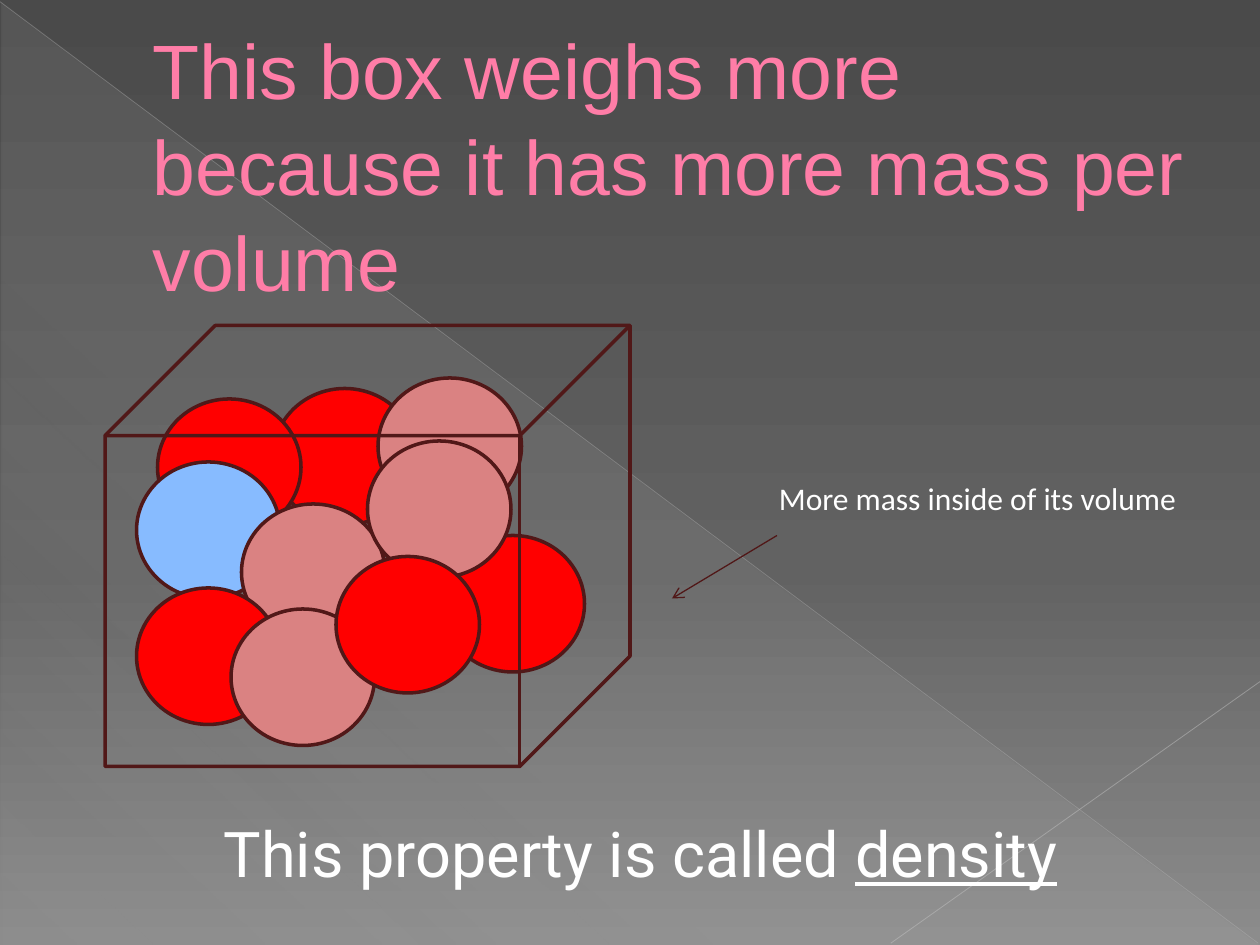
"""Slide showing that a box with more mass per volume has a higher density."""
from lxml import etree
from pptx import Presentation
from pptx.dml.color import RGBColor
from pptx.enum import shapes, text
from pptx.oxml.ns import qn
from pptx.util import Pt

TITLE = "This box weighs more because it has more mass per volume"
LABEL = "More mass inside of its volume"
PROPERTY = ["This property is called ", "density"]

RED, ROSE, BLUE = "FF0000", "DA8282", "87BBFF"
OUTLINE, WHITE = "511818", "FFFFFF"
BACKDROP = [(0, "4A4A4A", 100), (60, "626262", 100), (100, "8C8C8C", 100)]
SHEEN = [(0, "D2D2D2", 10), (70, "D2D2D2", 8), (100, "D2D2D2", 1)]
RAYS = [((0, 1), (719, 539), "BFBFBF", 0.39, 35),
        ((720, 389.5), (509, 539), "C6C6C6", 0.47, 45)]
BALL_SIZE = (82, 78)
BACK_BALLS = [(156, 222, RED), (252, 306, RED), (216, 216, ROSE), (90, 228, RED)]
FRONT_BALLS = [(78, 264, BLUE), (138, 288, ROSE), (78, 336, RED),
               (132, 348, ROSE), (210, 252, ROSE), (192, 318, RED)]
BOX = (60, 186, 300, 252)
ARROW = ((444, 306), (384, 342))


def rgb(value):
    return RGBColor.from_string(value)


def add_color(parent, value, alpha=100):
    clr = etree.SubElement(parent, qn("a:srgbClr"), val=value)
    if alpha < 100:
        etree.SubElement(clr, qn("a:alpha"), val=str(alpha * 1000))


def set_gradient(fill, element, stops, angle):
    fill.gradient()
    grad = element.find(".//" + qn("a:gradFill"))
    for child in list(grad):
        grad.remove(child)
    gs_list = etree.SubElement(grad, qn("a:gsLst"))
    for pos, value, alpha in stops:
        add_color(etree.SubElement(gs_list, qn("a:gs"), pos=str(pos * 1000)), value, alpha)
    etree.SubElement(grad, qn("a:lin"), ang=str(angle * 60000), scaled="0")


def add_shape(s, kind, box, fill=None):
    sp = s.shapes.add_shape(kind, *map(Pt, box))
    sp.shadow.inherit = False
    if fill:
        sp.fill.solid()
        sp.fill.fore_color.rgb = rgb(fill)
    else:
        sp.fill.background()
    sp.line.color.rgb = rgb(OUTLINE)
    sp.line.width = Pt(2)
    return sp


def add_balls(s, balls):
    for x, y, fill in balls:
        add_shape(s, shapes.MSO_SHAPE.OVAL, (x, y, *BALL_SIZE), fill)


def add_line(s, start, end, color, width, alpha=100, arrow=False):
    line = s.shapes.add_connector(shapes.MSO_CONNECTOR.STRAIGHT, *map(Pt, start + end))
    line.line.color.rgb = rgb(color)
    line.line.width = Pt(width)
    ln = line.element.spPr.find(qn("a:ln"))
    if alpha < 100:
        etree.SubElement(ln.find(".//" + qn("a:srgbClr")), qn("a:alpha"), val=str(alpha * 1000))
    if arrow:
        etree.SubElement(ln, qn("a:tailEnd"), type="arrow")
    etree.SubElement(line.element.spPr, qn("a:effectLst"))


def style(p, font, size, color, align):
    p.font.name, p.font.size = font, Pt(size)
    p.font.color.rgb = rgb(color)
    p.alignment = align


def add_text(s, box, runs, font, size, align):
    tf = s.shapes.add_textbox(*map(Pt, box)).text_frame
    tf.word_wrap = True
    tf.auto_size = text.MSO_AUTO_SIZE.SHAPE_TO_FIT_TEXT
    p = tf.paragraphs[0]
    for words in runs:
        p.add_run().text = words
    style(p, font, size, WHITE, align)
    return p


def add_title(s):
    title = s.shapes.title
    s.shapes.element.append(title.element)
    title.left, title.top, title.width, title.height = map(Pt, (42, 48, 648, 90))
    tf = title.text_frame
    tf.auto_size = text.MSO_AUTO_SIZE.NONE
    tf.vertical_anchor = text.MSO_ANCHOR.MIDDLE
    p = tf.paragraphs[0]
    r = p.add_run()
    r.text = TITLE
    style(p, "Arial", 44, "FF7DA7", text.PP_ALIGN.LEFT)
    p.line_spacing = 1.04
    p_pr = p.font and p.runs[0].font and title.element.find(".//" + qn("a:pPr"))
    p_pr.set("marL", str(Pt(38)))
    p_pr.set("indent", "0")
    r.font.color.rgb = rgb("FF7DA7")
    ln = etree.Element(qn("a:ln"), w=str(Pt(0.5)))
    add_color(etree.SubElement(ln, qn("a:solidFill")), "B12761")
    title.element.find(".//" + qn("a:rPr")).insert(0, ln)


def main():
    prs = Presentation()
    prs.slide_width, prs.slide_height = Pt(720), Pt(540)
    s = prs.slides.add_slide(prs.slide_layouts[5])
    set_gradient(s.background.fill, s.element, BACKDROP, 90)

    sheen = add_shape(s, shapes.MSO_SHAPE.RIGHT_TRIANGLE, (1, 1.5, 718.5, 538.5))
    set_gradient(sheen.fill, sheen.element, SHEEN, 133)
    sheen.line.fill.background()
    for ray in RAYS:
        add_line(s, *ray)

    add_title(s)
    add_balls(s, BACK_BALLS)
    add_shape(s, shapes.MSO_SHAPE.CUBE, BOX)
    add_balls(s, FRONT_BALLS)

    add_text(s, (438, 270, 252, 29), [LABEL], "Calibri", 18, text.PP_ALIGN.LEFT)
    add_line(s, *ARROW, OUTLINE, 0.75, arrow=True)
    p = add_text(s, (90, 462, 552, 51), PROPERTY, "Roboto", 36, text.PP_ALIGN.CENTER)
    p.runs[-1].font.underline = True
    prs.save("out.pptx")


if __name__ == "__main__":
    main()
